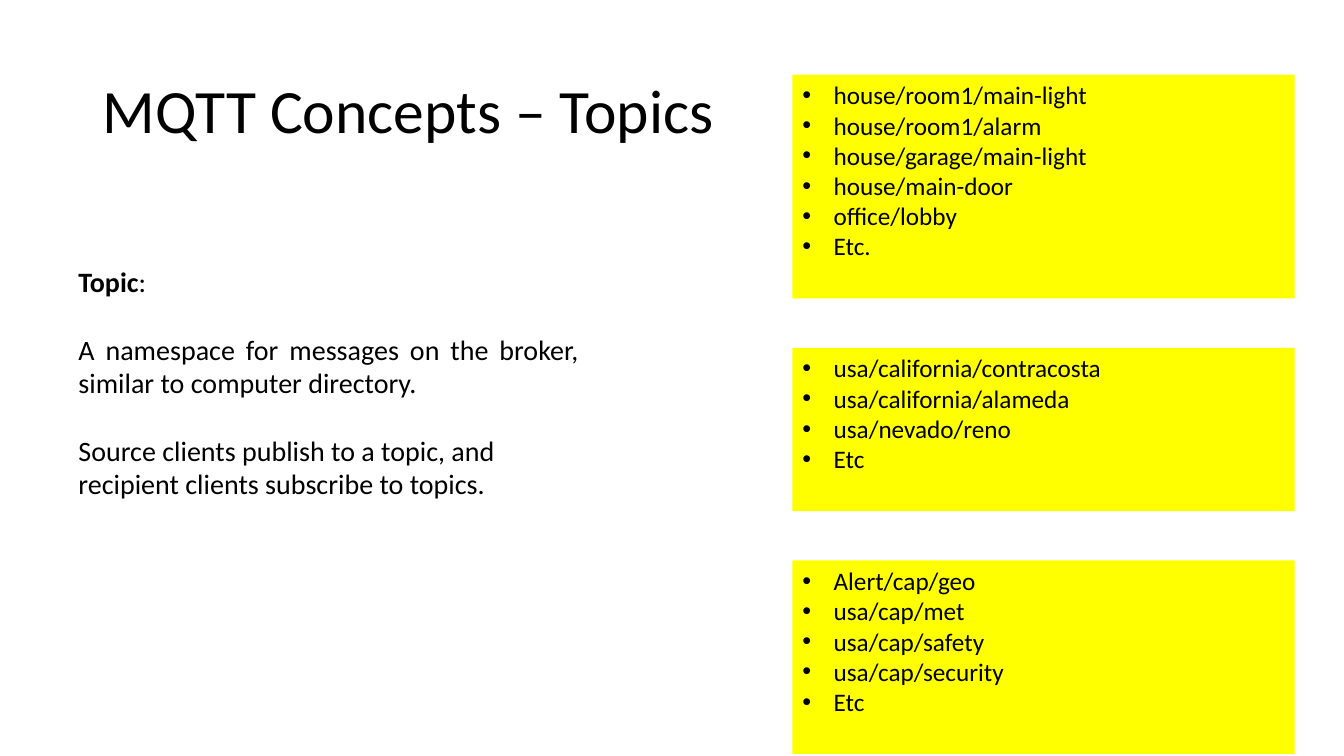
from lxml import etree
from pptx import Presentation
from pptx import util as u
from pptx.dml.color import RGBColor
from pptx.enum import shapes, text
from pptx.oxml.ns import qn

PX = 9144


def px(length):
    return u.Emu(length * PX)


def colour(value):
    return RGBColor.from_string(value)


class TopicPage:
    font = "Calibri"
    ink = "000000"
    highlight = "FFFF00"
    indent = 31

    def __init__(self, deck):
        self.page = deck.slides.add_slide(deck.slide_layouts[6])

    def add_span(self, para, words, size, bold=False):
        span = para.add_run()
        span.text = words
        span.font.name = self.font
        span.font.size = u.Pt(size)
        span.font.bold = bold
        span.font.color.rgb = colour(self.ink)

    def add_paragraphs(self, frame, paragraphs, size):
        for index, spans in enumerate(paragraphs):
            para = frame.paragraphs[0] if index == 0 else frame.add_paragraph()
            for words, bold in spans:
                self.add_span(para, words, size, bold)
        return frame.paragraphs

    def text_box(self, left, top, width, height, paragraphs, size,
                 anchor=text.MSO_ANCHOR.TOP):
        box = self.page.shapes.add_textbox(px(left), px(top), px(width), px(height))
        box.text_frame.word_wrap = True
        box.text_frame.vertical_anchor = anchor
        return self.add_paragraphs(box.text_frame, paragraphs, size)

    def title(self, left, top, width, height, words):
        paras = self.text_box(left, top, width, height, [[(words, False)]], 44,
                              text.MSO_ANCHOR.MIDDLE)
        paras[0].line_spacing = 0.9

    def definition(self, left, top, width, height, paragraphs, gaps):
        paras = self.text_box(left, top, width, height, paragraphs, 20)
        for para, gap in zip(paras, gaps):
            para.alignment = text.PP_ALIGN.JUSTIFY
            para.space_after = u.Pt(gap)

    def topic_list(self, left, top, width, height, topics):
        box = self.page.shapes.add_shape(
            shapes.MSO_SHAPE.RECTANGLE, px(left), px(top), px(width), px(height))
        box.shadow.inherit = False
        box.fill.solid()
        box.fill.fore_color.rgb = colour(self.highlight)
        box.line.fill.background()
        frame = box.text_frame
        frame.word_wrap = True
        frame.vertical_anchor = text.MSO_ANCHOR.TOP
        for para in self.add_paragraphs(frame, [[(topic, False)] for topic in topics], 18):
            para.alignment = text.PP_ALIGN.LEFT
            self.bullet(para)

    def bullet(self, para):
        properties = para._p.get_or_add_pPr()
        properties.set("marL", str(px(self.indent)))
        properties.set("indent", str(-px(self.indent)))
        etree.SubElement(properties, qn("a:buFont"), typeface="Arial")
        etree.SubElement(properties, qn("a:buChar"), char="•")


def main():
    deck = Presentation()
    deck.slide_width, deck.slide_height = px(1333), px(750)
    page = TopicPage(deck)

    page.title(92, 40, 674, 145, "MQTT Concepts – Topics")
    page.definition(68, 258, 516, 286, [
        [("Topic", True), (": ", False)],
        [("A namespace for messages on the broker, similar to computer directory. ", False)],
        [("Source clients publish to a topic, and ", False)],
        [("recipient clients subscribe to topics.", False)],
    ], gaps=(24, 24, 0, 0))

    topic_groups = [
        (74, 222, ["house/room1/main-light", "house/room1/alarm",
                   "house/garage/main-light", "house/main-door",
                   "office/lobby", "Etc."]),
        (345, 162, ["usa/california/contracosta", "usa/california/alameda",
                    "usa/nevado/reno", "Etc"]),
        (556, 192, ["Alert/cap/geo", "usa/cap/met", "usa/cap/safety",
                    "usa/cap/security", "Etc"]),
    ]
    for top, height, topics in topic_groups:
        page.topic_list(786, top, 498, height, topics)

    deck.save("out.pptx")


if __name__ == "__main__":
    main()
